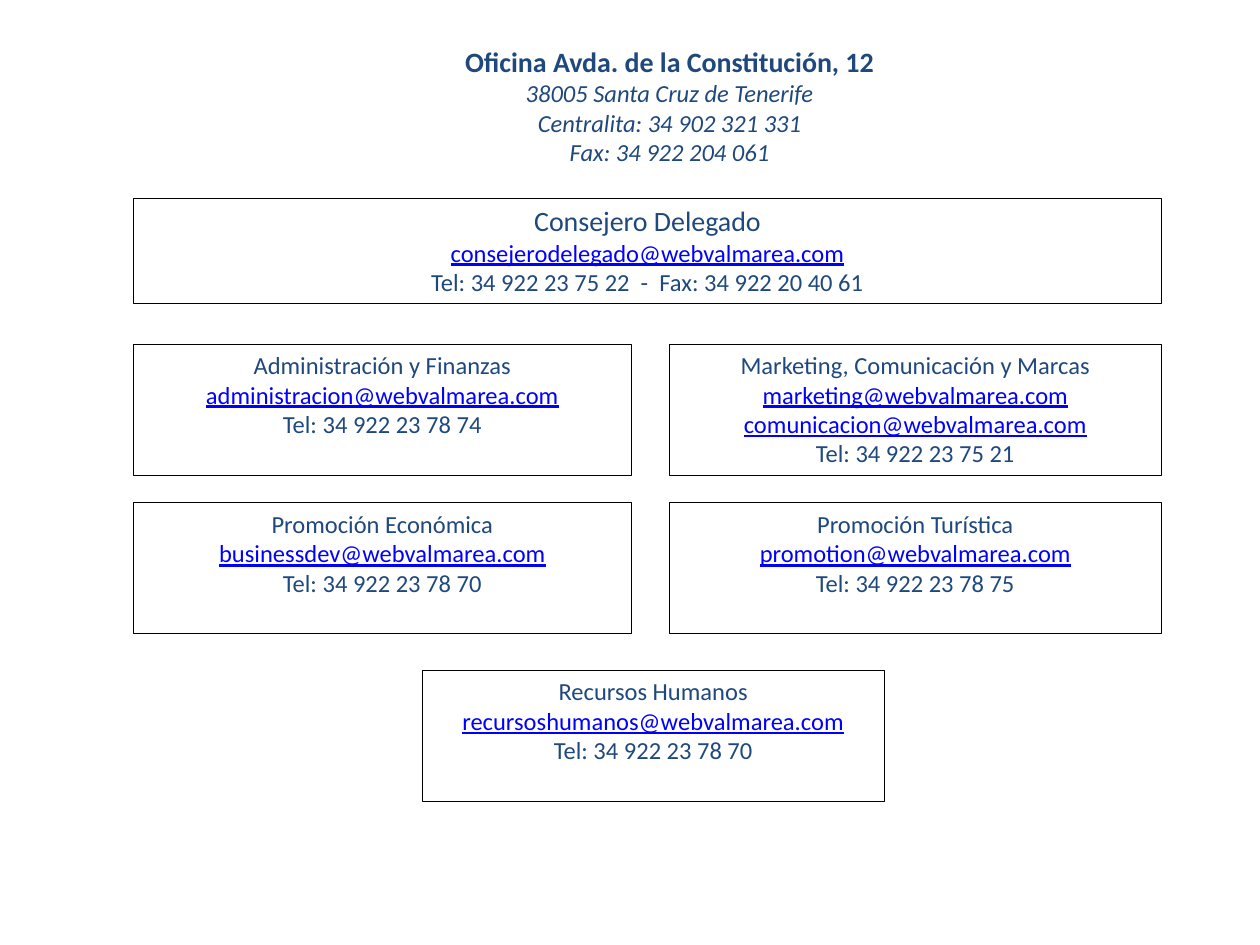
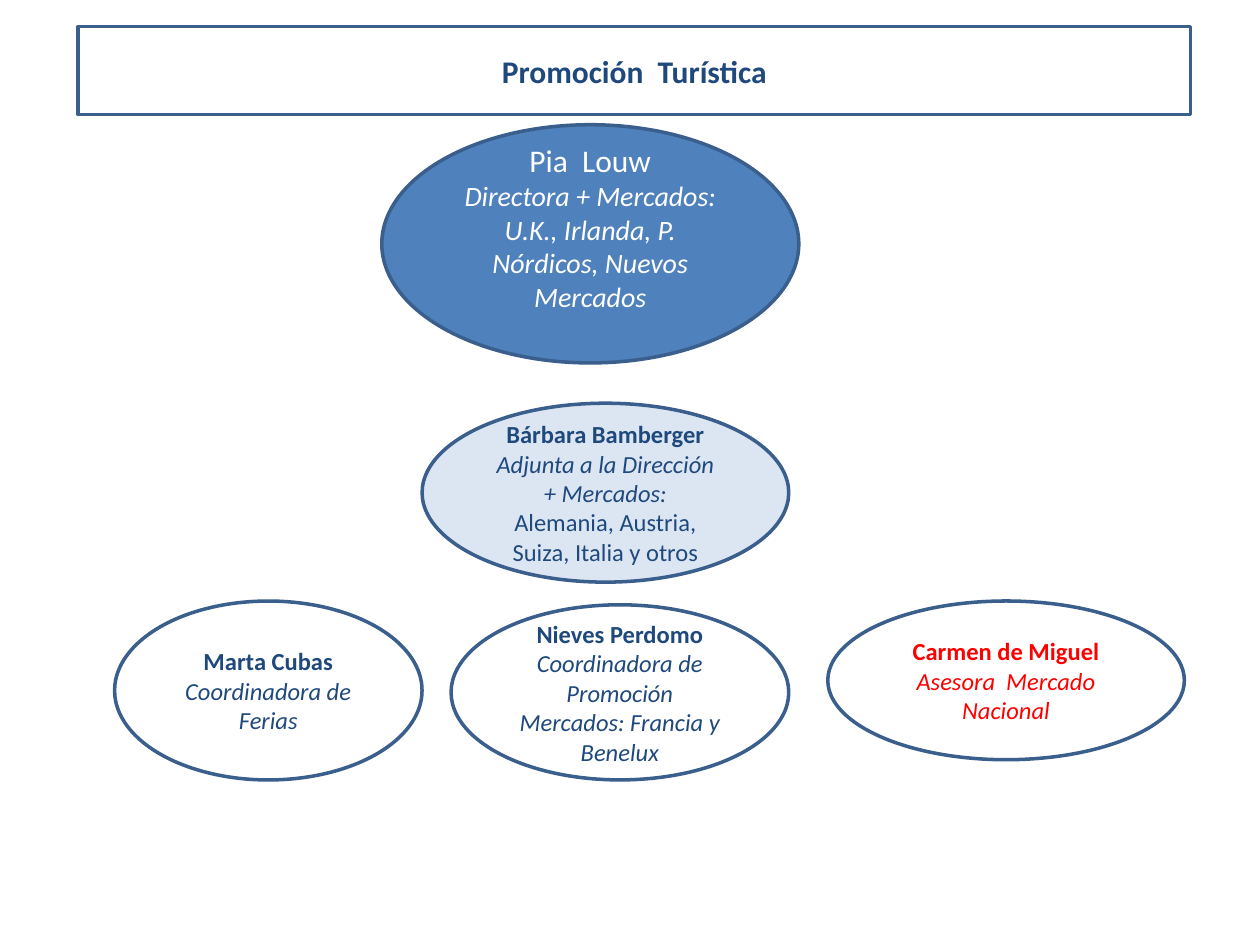
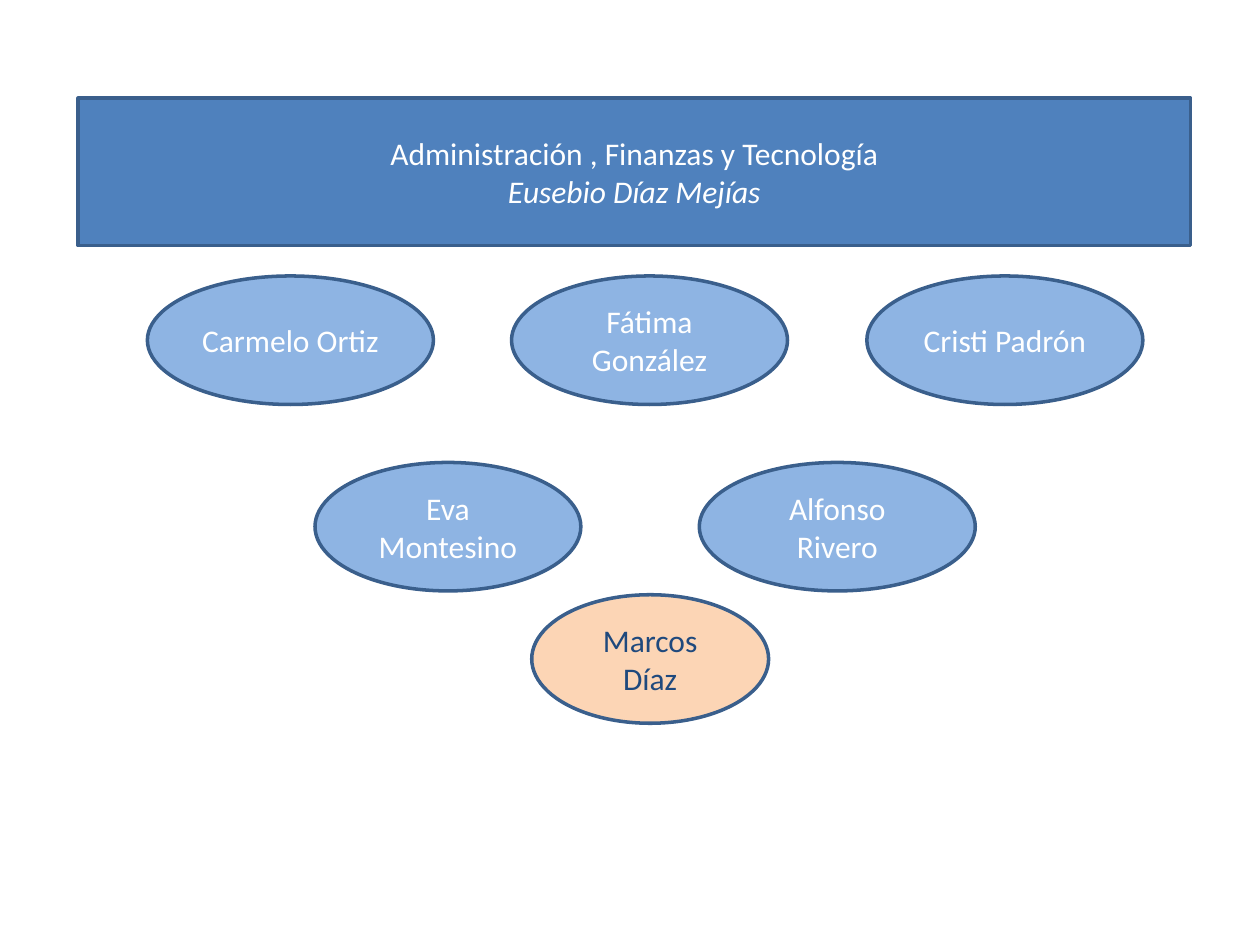
"""Builds three slides of office contacts and department charts."""
from dataclasses import dataclass
from pptx import Presentation
from pptx.dml.color import RGBColor
from pptx.enum.shapes import MSO_SHAPE
from pptx.enum.text import MSO_ANCHOR, PP_ALIGN
from pptx.util import Inches, Pt

NAVY = RGBColor(0x1F, 0x49, 0x7D)
OUTLINE = RGBColor(0x3A, 0x5F, 0x8C)
BLUE = RGBColor(0x4F, 0x81, 0xBD)
SKY = RGBColor(0x8E, 0xB4, 0xE3)
PALE = RGBColor(0xDC, 0xE6, 0xF2)
PEACH = RGBColor(0xFC, 0xD5, 0xB5)
LINK = RGBColor(0x00, 0x00, 0xFF)
RED = RGBColor(0xFF, 0x00, 0x00)
WHITE = RGBColor(0xFF, 0xFF, 0xFF)
BLACK = RGBColor(0x00, 0x00, 0x00)

COLUMNS, ROWS = 100, 75
FONT = "Calibri"
DOMAIN = "webvalmarea.com"


@dataclass
class Line:
    """One paragraph of text and its look."""
    text: str
    size: int = 14
    color: RGBColor = NAVY
    bold: bool = False
    italic: bool = False
    underline: bool = False


class Deck:
    """Holds the style and the current slide; places are in grid columns and rows."""

    def __init__(self):
        self.presentation = Presentation()
        self.presentation.slide_width = Inches(10)
        self.presentation.slide_height = Inches(7.5)
        self.column = self.presentation.slide_width / COLUMNS
        self.row = self.presentation.slide_height / ROWS
        self.slide = None

    def new_slide(self):
        self.slide = self.presentation.slides.add_slide(self.presentation.slide_layouts[6])

    def place(self, left, top, width, height):
        return (round(left * self.column), round(top * self.row),
                round(width * self.column), round(height * self.row))

    def fill_text(self, shape, lines, anchor=MSO_ANCHOR.MIDDLE):
        frame = shape.text_frame
        frame.word_wrap = True
        frame.vertical_anchor = anchor
        for index, line in enumerate(lines):
            paragraph = frame.add_paragraph() if index else frame.paragraphs[0]
            paragraph.alignment = PP_ALIGN.CENTER
            run = paragraph.add_run()
            run.text = line.text
            font = run.font
            font.name, font.size = FONT, Pt(line.size)
            font.color.rgb = line.color
            font.bold, font.italic = line.bold, line.italic
            font.underline = line.underline

    def text(self, place, lines):
        self.fill_text(self.slide.shapes.add_textbox(*self.place(*place)), lines)

    def shape(self, kind, place, lines, fill=None, line_color=OUTLINE, line_width=2,
              anchor=MSO_ANCHOR.MIDDLE):
        shape = self.slide.shapes.add_shape(kind, *self.place(*place))
        shape.shadow.inherit = False
        if fill is None:
            shape.fill.background()
        else:
            shape.fill.solid()
            shape.fill.fore_color.rgb = fill
        shape.line.color.rgb = line_color
        shape.line.width = Pt(line_width)
        self.fill_text(shape, lines, anchor)
        return shape

    def contact(self, place, name, mailboxes, phone, size=14):
        links = [Line(f"{mailbox}@{DOMAIN}", color=LINK, underline=True) for mailbox in mailboxes]
        self.shape(MSO_SHAPE.RECTANGLE, place, [Line(name, size), *links, Line(phone)],
                   line_color=BLACK, line_width=0.25, anchor=MSO_ANCHOR.TOP)

    def banner(self, top, height, lines, fill=None):
        self.shape(MSO_SHAPE.RECTANGLE, (6.2, top, 88.3, height), lines, fill)

    def oval(self, place, lines, fill=None):
        return self.shape(MSO_SHAPE.OVAL, place, lines, fill)

    def person(self, place, name, role, *details, color=NAVY, fill=None):
        lines = [Line(name, color=color, bold=True), Line(role, color=color, italic=True)]
        self.oval(place, lines + [Line(detail, color=color) for detail in details], fill)


def build_contacts(deck):
    deck.new_slide()
    address = ["38005 Santa Cruz de Tenerife", "Centralita: 34 902 321 331", "Fax: 34 922 204 061"]
    deck.text((14.1, 2.9, 78.1, 11),
              [Line("Oficina Avda. de la Constitución, 12", 16, bold=True)]
              + [Line(entry, italic=True) for entry in address])
    deck.contact((10.6, 15.7, 81.6, 8.4), "Consejero Delegado", ["consejerodelegado"],
                 "Tel: 34 922 23 75 22  -  Fax: 34 922 20 40 61", 16)
    left, right = (10.6, 39.5), (53.1, 39.1)
    upper, middle, lower = 27.3, 39.9, 53.2
    departments = [
        (left, upper, "Administración y Finanzas", ["administracion"], "78 74"),
        (right, upper, "Marketing, Comunicación y Marcas", ["marketing", "comunicacion"], "75 21"),
        (left, middle, "Promoción Económica", ["businessdev"], "78 70"),
        (right, middle, "Promoción Turística", ["promotion"], "78 75"),
        ((33.5, 36.7), lower, "Recursos Humanos", ["recursoshumanos"], "78 70"),
    ]
    for (start, width), top, name, mailboxes, extension in departments:
        deck.contact((start, top, width, 10.4), name, mailboxes, f"Tel: 34 922 23 {extension}")


def build_tourism(deck):
    deck.new_slide()
    deck.banner(2.1, 7, [Line("Promoción  Turística", 18, bold=True)])
    director = deck.oval((30.3, 9.9, 33.1, 18.9), [
        Line("Pia  Louw", 18, WHITE),
        Line("Directora + Mercados: U.K., Irlanda, P. Nórdicos, Nuevos Mercados", 16, WHITE,
             italic=True)], BLUE)
    director.text_frame.margin_bottom = Inches(0.32)
    deck.person((33.5, 32, 29.1, 14.2), "Bárbara Bamberger", "Adjunta a la Dirección + Mercados:",
                "Alemania, Austria, Suiza, Italia y otros", fill=PALE)
    deck.person((9.1, 47.7, 24.4, 14.2), "Marta Cubas", "Coordinadora de Ferias")
    deck.person((35.8, 48, 26.8, 13.9), "Nieves Perdomo",
                "Coordinadora de Promoción Mercados: Francia y Benelux")
    deck.person((65.7, 47.7, 28.3, 12.6), "Carmen de Miguel", "Asesora  Mercado Nacional",
                color=RED)


def build_administration(deck):
    deck.new_slide()
    deck.banner(7.8, 11.7, [Line("Administración , Finanzas y Tecnología", 18, WHITE),
                            Line("Eusebio Díaz Mejías", 18, WHITE, italic=True)], BLUE)
    staff = [
        (11.7, 21.9, 22.7, "Carmelo Ortiz", SKY, WHITE),
        (40.6, 21.9, 21.9, "Fátima González", SKY, WHITE),
        (68.8, 21.9, 21.9, "Cristi Padrón", SKY, WHITE),
        (25, 36.7, 21.1, "Eva Montesino", SKY, WHITE),
        (55.5, 36.7, 21.9, "Alfonso Rivero", SKY, WHITE),
        (42.2, 47.2, 18.8, "Marcos Díaz", PEACH, NAVY),
    ]
    for left, top, width, name, fill, color in staff:
        deck.oval((left, top, width, 10.2), [Line(name, 18, color)], fill)


def main():
    deck = Deck()
    build_contacts(deck)
    build_tourism(deck)
    build_administration(deck)
    deck.presentation.save("out.pptx")


if __name__ == "__main__":
    main()
